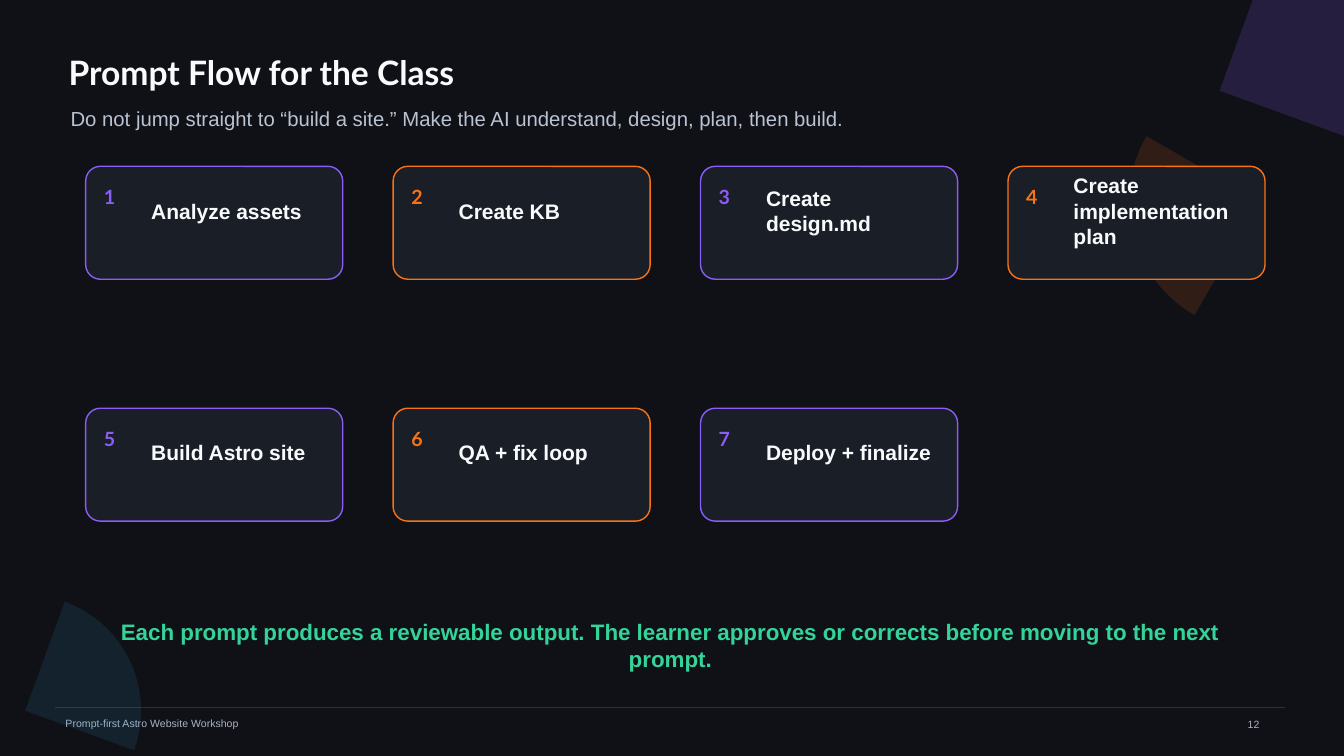
import pptx
import pptx.dml.color
import pptx.enum.shapes
import pptx.enum.text
import pptx.oxml
import pptx.oxml.ns
import pptx.util

Pt = pptx.util.Pt
SHAPE = pptx.enum.shapes.MSO_SHAPE
ALIGN = pptx.enum.text.PP_ALIGN
ANCHOR = pptx.enum.text.MSO_ANCHOR

VIOLET, ORANGE, SKY, GREEN = "8B5CF6", "F97316", "38BDF8", "34D399"
WHITE, MUTED, FOOTER = "F8FAFC", "BAC3D2", "AAB3C1"
BACKGROUND, CARD, RULE = "0F1117", "1A1E27", "2B303B"


def color(hex_value):
    return pptx.dml.color.RGBColor.from_string(hex_value)


class SlideBuilder:
    heading_font = "Lato"
    body_font = "Arial"

    def __init__(self, slide):
        self.slide = slide

    def background(self, fill):
        self.slide.background.fill.solid()
        self.slide.background.fill.fore_color.rgb = color(fill)

    def set_text(self, shape, text, size, text_color, bold=False, font=body_font,
                 align=ALIGN.LEFT, anchor=ANCHOR.MIDDLE, inset=(0, 0)):
        frame = shape.text_frame
        frame.text = text
        frame.word_wrap = True
        frame.auto_size = pptx.enum.text.MSO_AUTO_SIZE.NONE
        frame.vertical_anchor = anchor
        frame.margin_left = frame.margin_right = Pt(inset[0])
        frame.margin_top = frame.margin_bottom = Pt(inset[1])
        paragraph = frame.paragraphs[0]
        paragraph.alignment = align
        run_font = paragraph.runs[0].font
        run_font.name = font
        run_font.size = Pt(size)
        run_font.bold = bold
        run_font.color.rgb = color(text_color)

    def title(self, box, text):
        shape = self.slide.shapes.title
        shape.left, shape.top, shape.width, shape.height = map(Pt, box)
        self.set_text(shape, text, 24, WHITE, True, self.heading_font)

    def text(self, box, text, size, text_color, **style):
        shape = self.slide.shapes.add_textbox(*map(Pt, box))
        self.set_text(shape, text, size, text_color, **style)

    def shape(self, kind, box, fill):
        shape = self.slide.shapes.add_shape(kind, *map(Pt, box))
        shape.shadow.inherit = False
        shape.fill.solid()
        shape.fill.fore_color.rgb = color(fill)
        return shape

    def wedge(self, left, top, size, rotation, fill, opacity):
        shape = self.shape(SHAPE.ARC, (left, top, size, size), fill)
        shape.rotation = rotation
        shape.line.fill.background()
        fill_color = shape._element.spPr.find(".//" + pptx.oxml.ns.qn("a:srgbClr"))
        alpha = pptx.oxml.parse_xml(
            f'<a:alpha {pptx.oxml.ns.nsdecls("a")} val="{opacity * 1000}"/>')
        fill_color.append(alpha)

    def line(self, start, end, line_color, width):
        connector = self.slide.shapes.add_connector(
            pptx.enum.shapes.MSO_CONNECTOR.STRAIGHT, *map(Pt, start + end))
        connector.line.color.rgb = color(line_color)
        connector.line.width = Pt(width)
        connector._element.spPr.append(
            pptx.oxml.parse_xml(f'<a:effectLst {pptx.oxml.ns.nsdecls("a")}/>'))

    def step_card(self, left, top, number, label, accent):
        card = self.shape(SHAPE.ROUNDED_RECTANGLE, (left, top, 183.6, 80.64), CARD)
        card.adjustments[0] = 0.13
        card.line.color.rgb = color(accent)
        card.line.width = Pt(1)
        self.text((left + 12.96, top + 12.96, 25.2, 18), str(number), 14, accent,
                  bold=True, font=self.heading_font)
        self.text((left + 46.8, top + 22.32, 122.4, 18.72), label, 15, WHITE, bold=True)


def main():
    presentation = pptx.Presentation()
    presentation.slide_width = Pt(960)
    presentation.slide_height = Pt(540)
    builder = SlideBuilder(presentation.slides.add_slide(presentation.slide_layouts[5]))
    builder.background(BACKGROUND)

    # Footer
    builder.line((39.6, 505.44), (918, 505.44), RULE, 0.75)
    builder.text((46.8, 509.76, 396, 14.4), "Prompt-first Astro Website Workshop", 7.5, FOOTER)

    # Decorative wedges
    builder.wedge(734.4, -72, 273.6, 20, VIOLET, 18)
    builder.wedge(806.4, 50.4, 187.2, 210, ORANGE, 14)
    builder.wedge(-64.8, 424.8, 165.6, 20, SKY, 10)

    # Heading
    builder.title((48.96, 32.4, 763.2, 37.44), "Prompt Flow for the Class")
    builder.text((50.4, 74.88, 763.2, 19.44),
                 "Do not jump straight to “build a site.” "
                 "Make the AI understand, design, plan, then build.", 14.5, MUTED)

    # Prompt steps, four to a row
    steps = ["Analyze assets", "Create KB", "Create design.md", "Create implementation plan",
             "Build Astro site", "QA + fix loop", "Deploy + finalize"]
    for index, label in enumerate(steps):
        row, column = divmod(index, 4)
        builder.step_card(61.2 + column * 219.6, 118.8 + row * 172.8,
                          index + 1, label, (VIOLET, ORANGE)[index % 2])

    # Takeaway and page number
    builder.text((79.2, 450, 799.2, 21.6),
                 "Each prompt produces a reviewable output. The learner approves "
                 "or corrects before moving to the next prompt.",
                 16, GREEN, bold=True, align=ALIGN.CENTER)
    builder.text((884.16, 509.04, 62.64, 23.76), "12", 7.5, FOOTER,
                 anchor=ANCHOR.TOP, inset=(7.2, 3.6))

    presentation.save("out.pptx")


if __name__ == "__main__":
    main()
